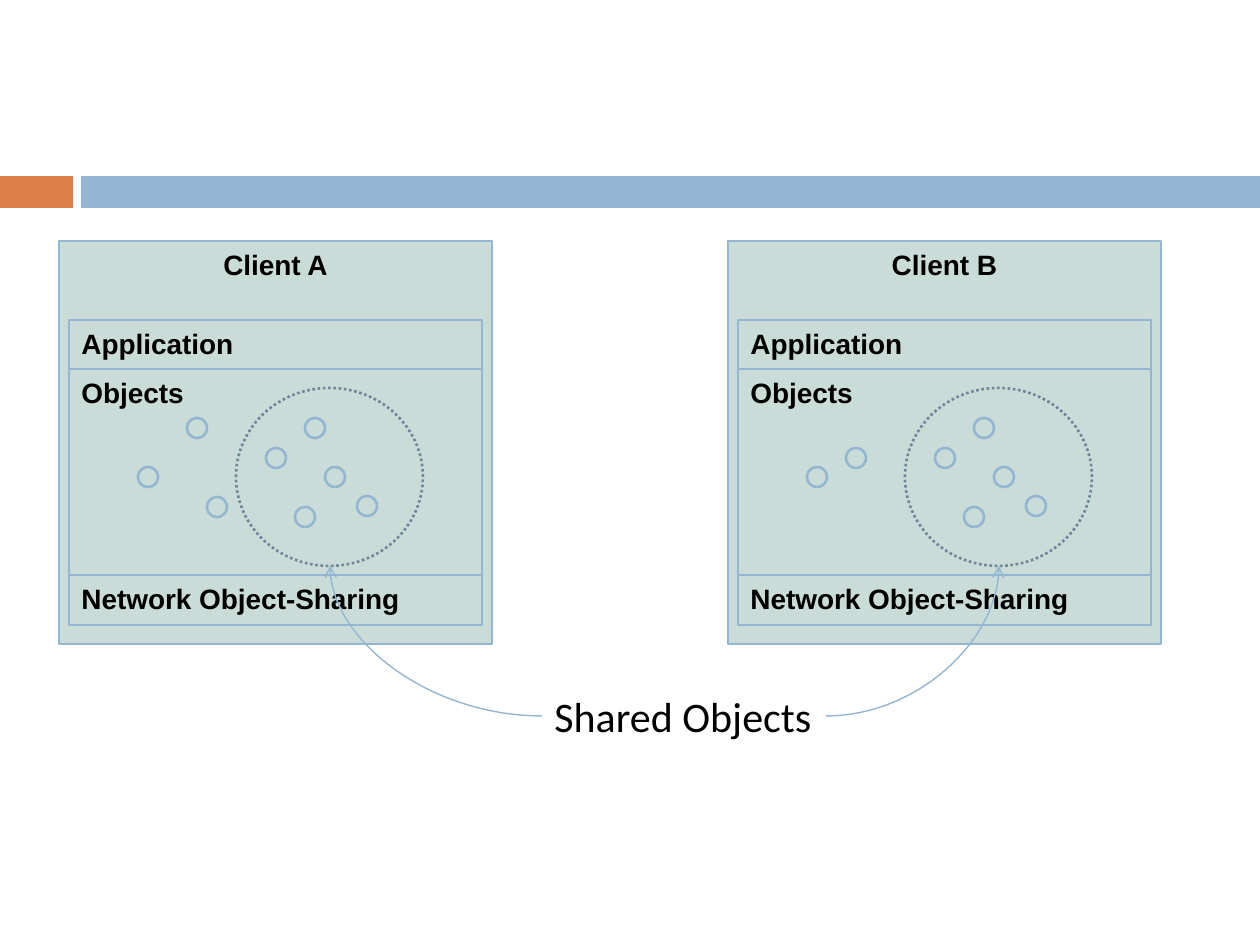
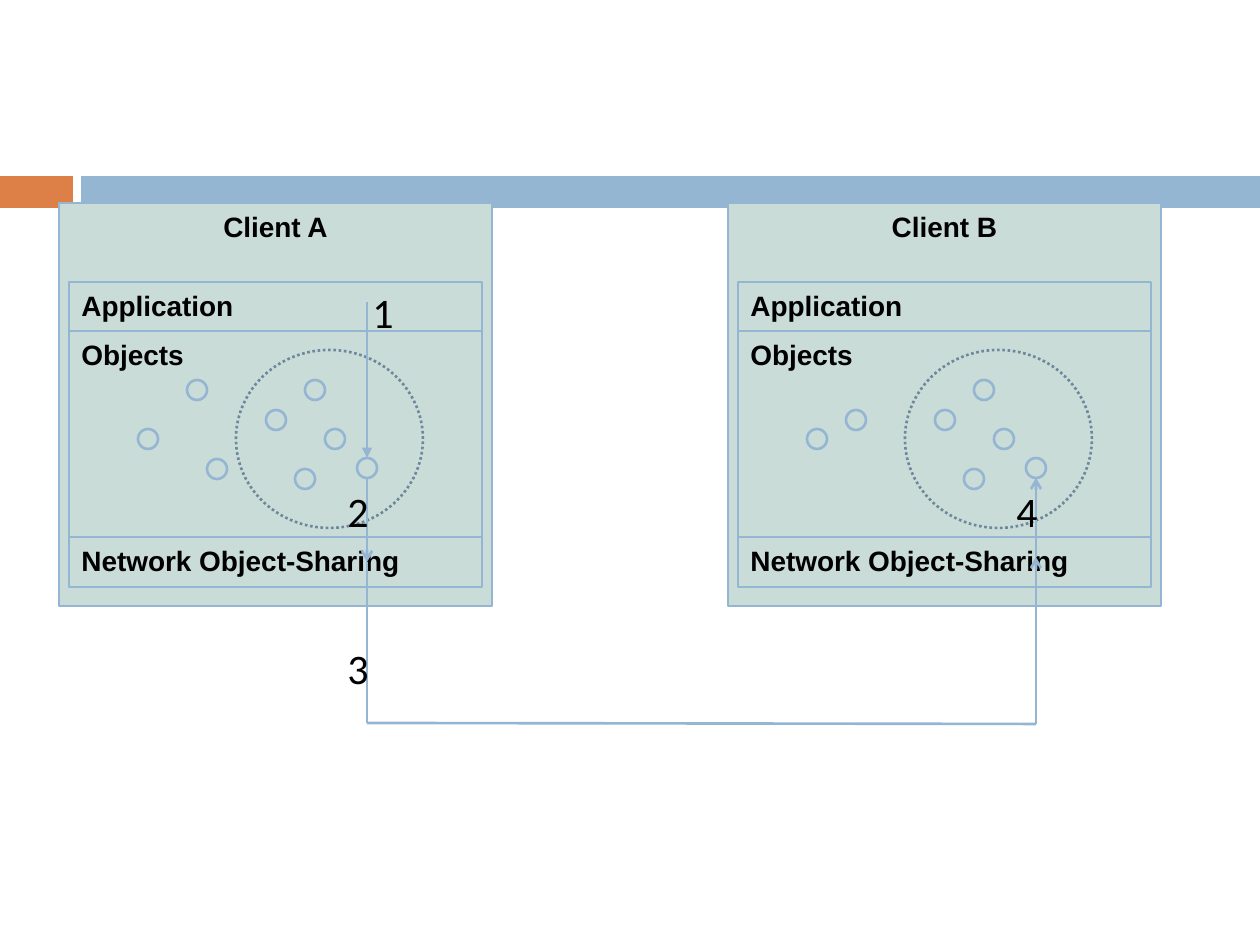
import pptx
import pptx.dml.color
import pptx.enum.dml
import pptx.enum.shapes
import pptx.enum.text
import pptx.oxml.ns
import pptx.util
from lxml import etree

PX = 7257  # EMU in one px, 126 px to the inch
BLUE = pptx.dml.color.RGBColor(0x94, 0xB6, 0xD2)
ORANGE = pptx.dml.color.RGBColor(0xDD, 0x80, 0x47)
SAGE = pptx.dml.color.RGBColor(0xCA, 0xDC, 0xD8)
SLATE = pptx.dml.color.RGBColor(0x6D, 0x87, 0x9B)
BLACK = pptx.dml.color.RGBColor(0, 0, 0)

RECTANGLE = pptx.enum.shapes.MSO_SHAPE.RECTANGLE
OVAL = pptx.enum.shapes.MSO_SHAPE.OVAL
STRAIGHT = pptx.enum.shapes.MSO_CONNECTOR.STRAIGHT
CURVE = pptx.enum.shapes.MSO_CONNECTOR.CURVE
LEFT = pptx.enum.text.PP_ALIGN.LEFT
CENTER = pptx.enum.text.PP_ALIGN.CENTER
qn = pptx.oxml.ns.qn


def add_text(shape, text, font, size, align=LEFT, bold=False):
    shape.text_frame.vertical_anchor = pptx.enum.text.MSO_ANCHOR.TOP
    paragraph = shape.text_frame.paragraphs[0]
    paragraph.alignment = align
    run = paragraph.add_run()
    run.text = text
    run.font.name = font
    run.font.size = pptx.util.Pt(size)
    run.font.bold = bold
    run.font.color.rgb = BLACK


def add_line(slide, kind, points, width, arrow=None):
    """Add a connector along (x1, y1, x2, y2), with an arrowhead at its end."""
    connector = slide.shapes.add_connector(kind, *[value * PX for value in points])
    connector.line.color.rgb = BLUE
    connector.line.width = pptx.util.Pt(width)
    properties = connector.element.spPr
    if arrow:
        etree.SubElement(properties.find(qn("a:ln")), qn("a:tailEnd"), type=arrow)
    etree.SubElement(properties, qn("a:effectLst"))
    return connector


presentation = pptx.Presentation()
presentation.slide_width = pptx.util.Inches(10)
presentation.slide_height = pptx.util.Inches(7.5)
layout = presentation.slide_layouts[6]
sharing_slide = presentation.slides.add_slide(layout)
update_slide = presentation.slides.add_slide(layout)

# Bands shared by both slides, moved to the layout
for left, width, color in [(0, 73, ORANGE), (81, 1179, BLUE)]:
    band = sharing_slide.shapes.add_shape(
        RECTANGLE, left * PX, 176 * PX, width * PX, 32 * PX)
    band.shadow.inherit = False
    band.fill.solid()
    band.fill.fore_color.rgb = color
    band.line.fill.background()
    layout.shapes.element.append(band.element)

# Both clients on both slides; positions are those of client A on the first
DOT = 20
CLIENT_STEP = 669
shared_dots = [(276, 458), (305, 517), (335, 477), (315, 428), (367, 506)]
private_dots = {
    "Client A": [(148, 477), (217, 507), (197, 428)],
    "Client B": [(148, 477), (187, 458)],
}
for slide, shift_y in [(sharing_slide, 0), (update_slide, -38)]:
    for index, (client, own_dots) in enumerate(private_dots.items()):
        parts = [
            (RECTANGLE, 59, 241, 433, 403, client),
            (RECTANGLE, 69, 369, 413, 206, "Objects"),
            (RECTANGLE, 69, 320, 413, 49, "Application"),
            (RECTANGLE, 69, 575, 413, 50, "Network Object-Sharing"),
        ]
        for x, y in shared_dots + own_dots:
            parts.append((OVAL, x - DOT // 2, y - DOT // 2, DOT, DOT, ""))
        for kind, left, top, width, height, text in parts:
            shape = slide.shapes.add_shape(
                kind, (left + index * CLIENT_STEP) * PX, (top + shift_y) * PX,
                width * PX, height * PX)
            shape.shadow.inherit = False
            shape.fill.solid()
            shape.fill.fore_color.rgb = SAGE
            shape.line.color.rgb = BLUE
            shape.line.width = pptx.util.Pt(1.5)
            if text:
                align = CENTER if text == client else LEFT
                add_text(shape, text, "Arial", 16, align, bold=True)

        shared_ring = slide.shapes.add_shape(
            OVAL, (236 + index * CLIENT_STEP) * PX, (388 + shift_y) * PX,
            187 * PX, 178 * PX)
        shared_ring.shadow.inherit = False
        shared_ring.fill.background()
        shared_ring.line.color.rgb = SLATE
        shared_ring.line.width = pptx.util.Pt(1.5)
        shared_ring.line.dash_style = pptx.enum.dml.MSO_LINE.ROUND_DOT

# Slide 1: the label that points at both rings
label = sharing_slide.shapes.add_textbox(542 * PX, 684 * PX, 284 * PX, 64 * PX)
label.text_frame.word_wrap = False
label.text_frame.auto_size = pptx.enum.text.MSO_AUTO_SIZE.SHAPE_TO_FIT_TEXT
add_text(label, "Shared Objects", "Calibri", 24)
for side, start_x, ring_x in [(3, 826, 999), (1, 542, 330)]:
    curve = add_line(sharing_slide, CURVE, (start_x, 716, ring_x, 566), 0.79, "arrow")
    curve.element.spPr.find(qn("a:prstGeom")).set("prst", "curvedConnector2")
    curve.begin_connect(label, side)

# Slide 2: the path of an update from client A to client B
for points, arrow in [
    ((367, 302, 367, 458), "triangle"),
    ((367, 478, 367, 562), "arrow"),
    ((367, 562, 367, 723), None),
    ((367, 723, 1036, 724), None),
    ((1036, 724, 1036, 557), "arrow"),
    ((1036, 557, 1036, 478), "arrow"),
]:
    add_line(update_slide, STRAIGHT, points, 1.5, arrow)

for number, left, top in [("1", 360, 280), ("2", 335, 479), ("3", 335, 636), ("4", 1004, 479)]:
    step = update_slide.shapes.add_textbox(left * PX, top * PX, 42 * PX, 115 * PX)
    step.text_frame.word_wrap = True
    add_text(step, number, "Calibri", 24)

presentation.save("out.pptx")
